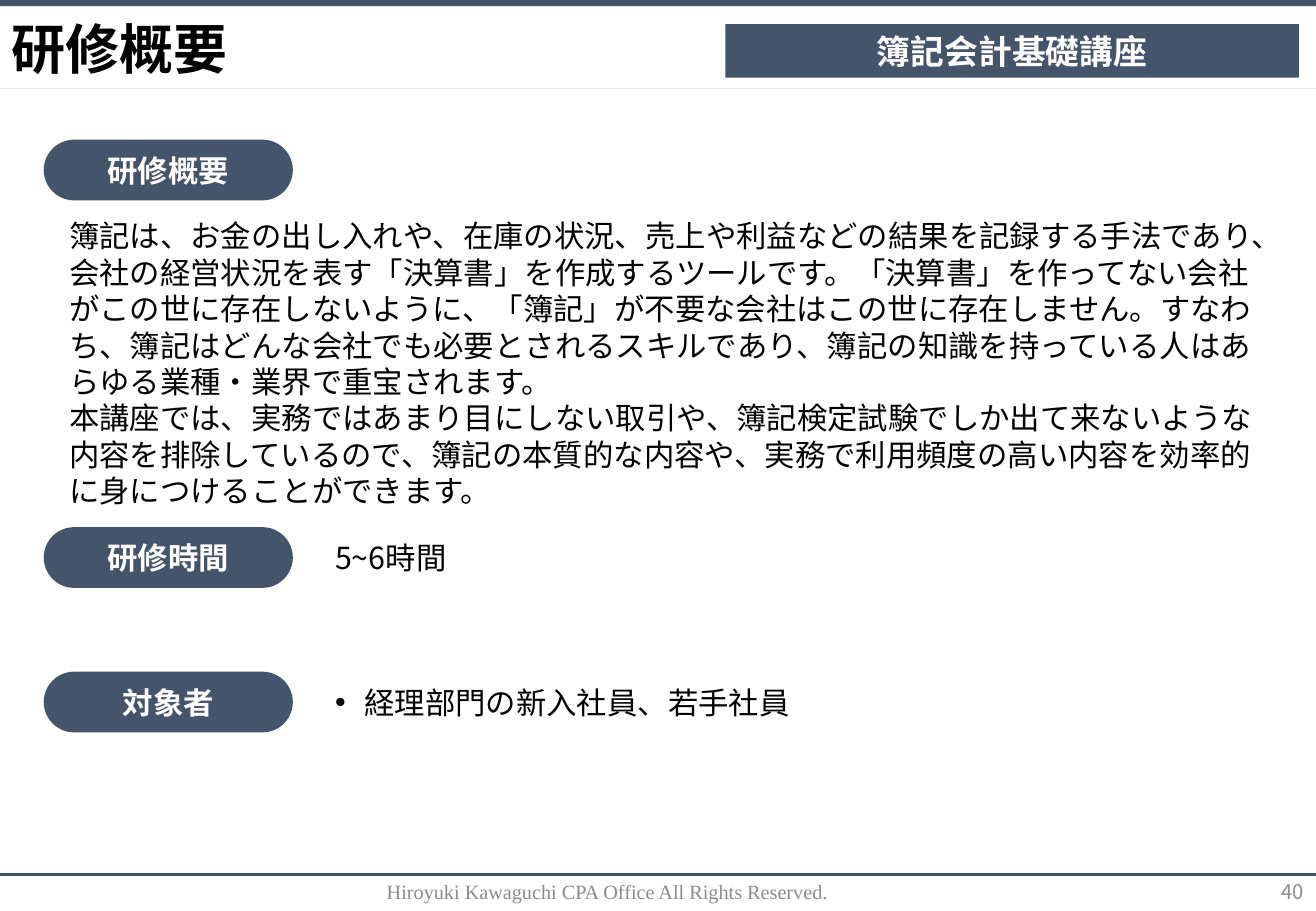
from lxml import etree
from pptx import Presentation, util as u
from pptx.dml.color import RGBColor
from pptx.enum import shapes, text
from pptx.oxml import ns

theme = {
    "navy": "44546A", "white": "FFFFFF", "black": "000000", "gray": "8C8C8C",
    "sans": "Noto Sans CJK JP", "serif": "Times New Roman",
    "title": 32, "banner": 20, "body": 18, "foot": 12,
}
WIDE, HIGH = 10.83, 7.5
LEFT, MID, RIGHT = text.PP_ALIGN.LEFT, text.PP_ALIGN.CENTER, text.PP_ALIGN.RIGHT
KIND = shapes.MSO_SHAPE

deck = Presentation()
deck.slide_width, deck.slide_height = u.Inches(WIDE), u.Inches(HIGH)
slide = deck.slides.add_slide(deck.slide_layouts[6])


def block(kind, *box):
    shape = slide.shapes.add_shape(kind, *map(u.Inches, box))
    shape.shadow.inherit = False
    shape.fill.solid()
    shape.fill.fore_color.rgb = RGBColor.from_string(theme["navy"])
    shape.line.fill.background()
    return shape


def write(shape, lines, size="body", color="black", face="sans", bold=False,
          align=LEFT, anchor=text.MSO_ANCHOR.TOP, wrap=True):
    frame = shape.text_frame
    frame.word_wrap, frame.vertical_anchor = wrap, anchor
    frame.text = lines
    style = {"size": u.Pt(theme[size]), "bold": bold, "name": theme[face]}
    for para in frame.paragraphs:
        para.alignment = align
        for run in para.runs:
            for key, value in style.items():
                setattr(run.font, key, value)
            run.font.color.rgb = RGBColor.from_string(theme[color])
            east = etree.SubElement(run.font._element, ns.qn("a:ea"))
            east.set("typeface", theme[face])
    return frame


# Header and footer rules
block(KIND.RECTANGLE, 0, 0.73, WIDE, 0)
block(KIND.RECTANGLE, 0, 0, WIDE, 0.05)
rule = slide.shapes.add_connector(
    shapes.MSO_CONNECTOR.STRAIGHT, 0, u.Inches(7.2), u.Inches(WIDE), u.Inches(7.2))
rule.line.width = u.Pt(1.5)
rule.line.color.rgb = RGBColor.from_string(theme["navy"])
etree.SubElement(rule._element.spPr, ns.qn("a:effectLst"))

# Section pills
label = {"color": "white", "bold": True, "align": MID, "anchor": text.MSO_ANCHOR.MIDDLE}
for name, top in (("研修概要", 1.15), ("研修時間", 4.34), ("対象者", 5.53)):
    pill = block(KIND.ROUNDED_RECTANGLE, 0.36, top, 2.05, 0.5)
    pill.adjustments[0] = 0.5
    write(pill, name, **label)

# Course banner
write(block(KIND.RECTANGLE, 5.97, 0.2, 4.72, 0.44), "簿記会計基礎講座", "banner", **label)

# Title, section texts, footer
about = (
    "簿記は、お金の出し入れや、在庫の状況、売上や利益などの結果を記録する手法であり、"
    "会社の経営状況を表す「決算書」を作成するツールです。"
    "「決算書」を作ってない会社がこの世に存在しないように、"
    "「簿記」が不要な会社はこの世に存在しません。"
    "すなわち、簿記はどんな会社でも必要とされるスキルであり、"
    "簿記の知識を持っている人はあらゆる業種・業界で重宝されます。\n"
    "本講座では、実務ではあまり目にしない取引や、"
    "簿記検定試験でしか出て来ないような内容を排除しているので、"
    "簿記の本質的な内容や、実務で利用頻度の高い内容を効率的に身につけることができます。"
)
foot = {"size": "foot", "color": "gray", "anchor": text.MSO_ANCHOR.MIDDLE}
target = "経理部門の新入社員、若手社員"
notes = (
    ((0, 0.08, 2, 0.64), "研修概要", {"size": "title", "bold": True, "wrap": False}),
    ((0.47, 1.74, 10, 2.22), about, {}),
    ((2.66, 4.39, 2.2, 0.4), "5~6時間", {}),
    ((2.66, 5.58, 5.66, 0.4), target, {}),
    ((2.48, 7.14, 5.04, 0.4), "Hiroyuki Kawaguchi CPA Office All Rights Reserved.",
     {**foot, "face": "serif", "align": MID}),
    ((8.5, 7.14, 2.33, 0.4), "40", {**foot, "align": RIGHT}),
)
for box, words, style in notes:
    frame = write(slide.shapes.add_textbox(*map(u.Inches, box)), words, **style)
    if words == target:
        props = frame.paragraphs[0]._p.get_or_add_pPr()
        props.set("marL", str(u.Inches(0.24)))
        props.set("indent", str(-u.Inches(0.24)))
        etree.SubElement(props, ns.qn("a:buFont")).set("typeface", "Arial")
        etree.SubElement(props, ns.qn("a:buChar")).set("char", "•")

deck.save("out.pptx")
